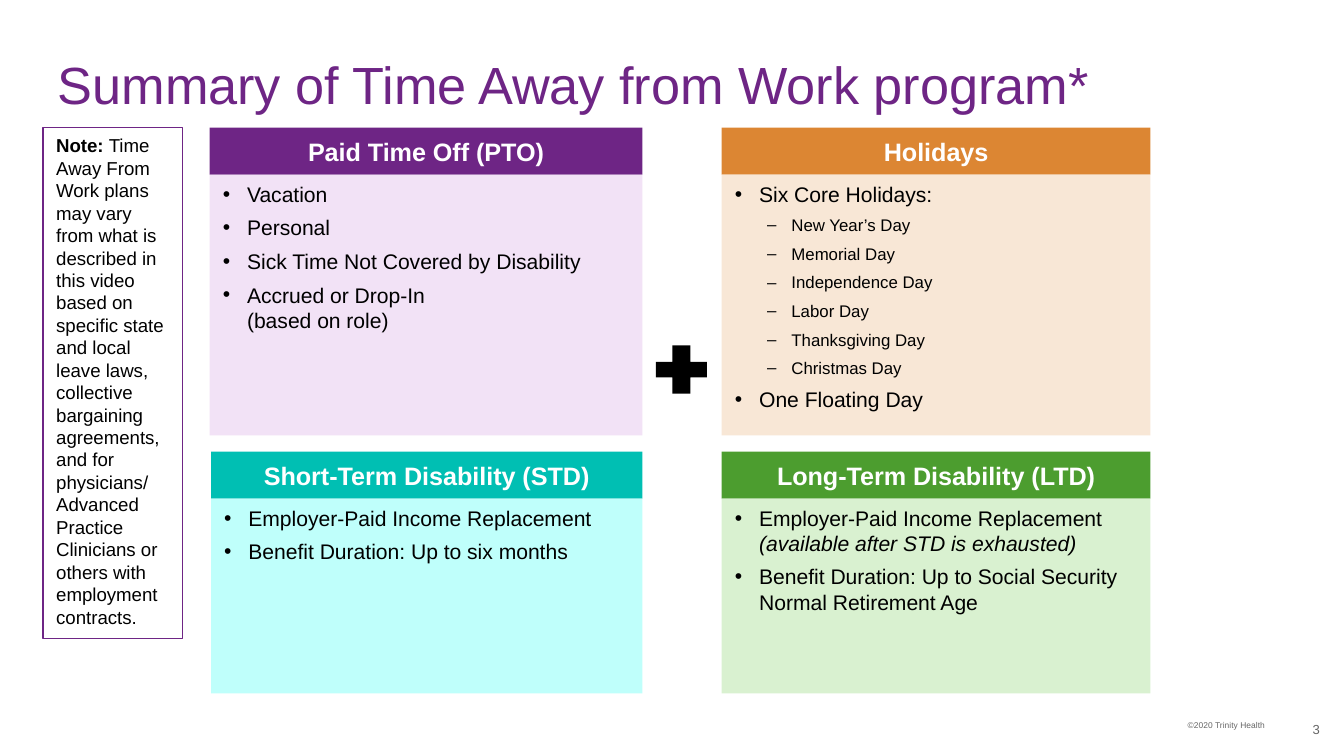
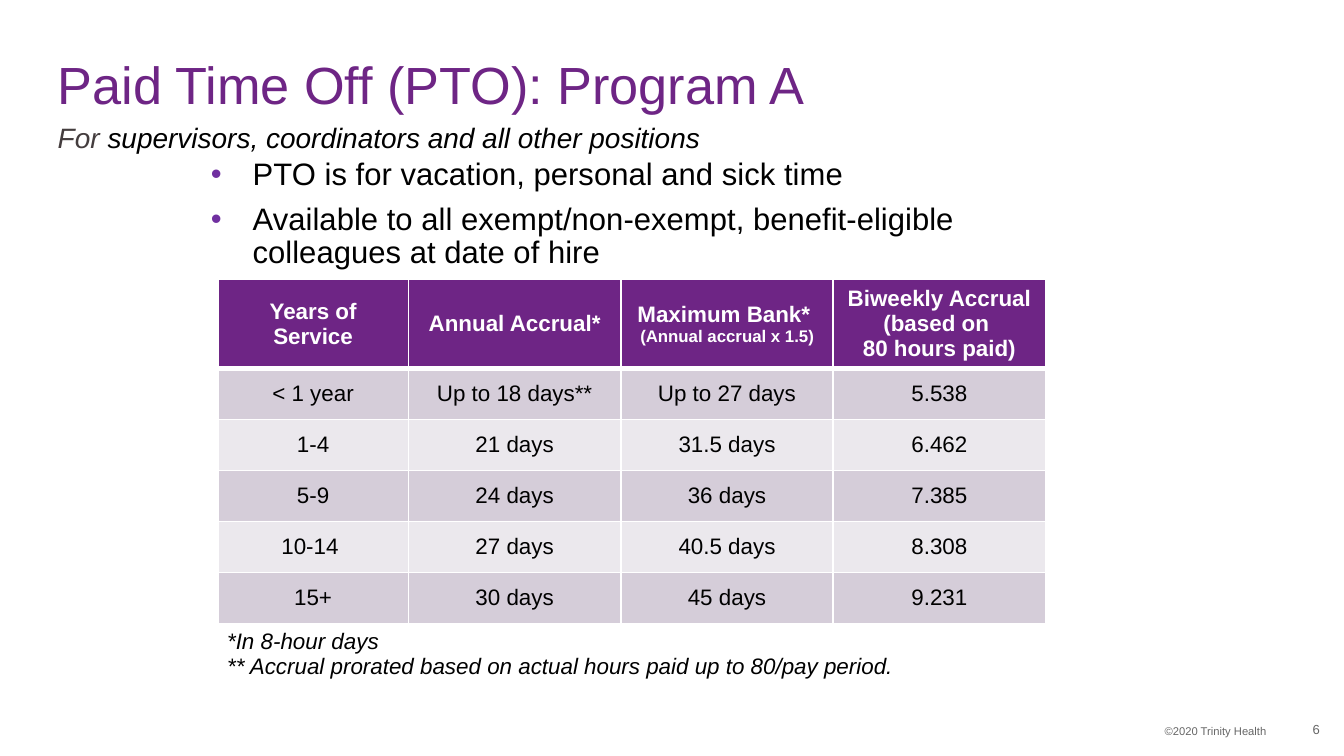
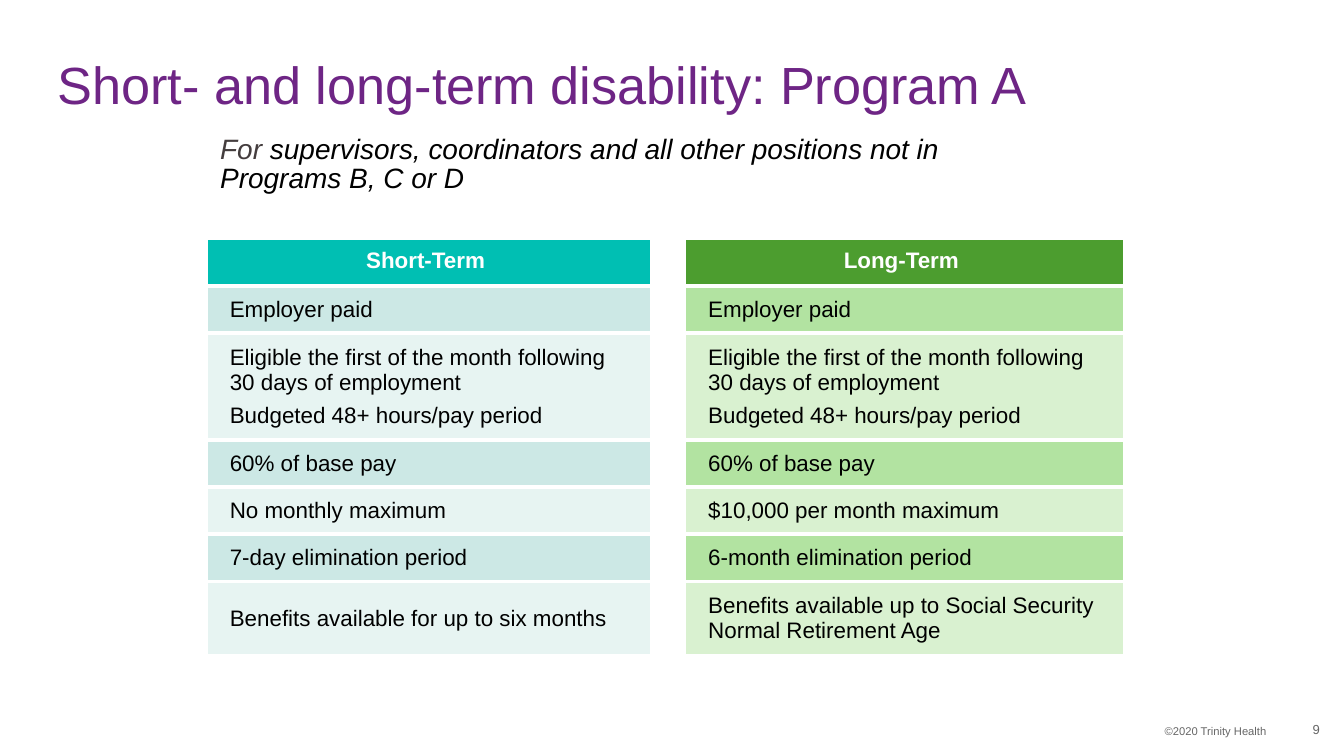
from lxml import etree
from pptx import Presentation
from pptx.dml.color import RGBColor
from pptx.enum import shapes, text
from pptx.oxml import ns
from pptx.util import Inches, Pt

FONT = "Arial"
PURPLE, TEAL, GREEN, ORANGE = "6E2585", "00BFB3", "4C9D2F", "DC8633"
BLACK, WHITE, GRAY, CHARCOAL = "000000", "FFFFFF", "666666", "443D3E"
LEFT, CENTER, RIGHT = text.PP_ALIGN.LEFT, text.PP_ALIGN.CENTER, text.PP_ALIGN.RIGHT
TOP, MIDDLE = text.MSO_ANCHOR.TOP, text.MSO_ANCHOR.MIDDLE


def rgb(value):
    return RGBColor.from_string(value)


def sub(parent, tag, **attrs):
    return etree.SubElement(parent, ns.qn(tag), attrs)


def set_insets(target, insets):
    sides = ("margin_left", "margin_top", "margin_right", "margin_bottom")
    for side, inset in zip(sides, insets):
        setattr(target, side, Inches(inset))


def add_runs(p, runs, size, color=BLACK, bold=False, italic=False):
    for content, changes in runs:
        look = {"size": size, "color": color, "bold": bold, "italic": italic, **changes}
        for i, line in enumerate(content.split("\n")):
            if i:
                p.add_line_break()
            r = p.add_run()
            r.text = line
            r.font.name = FONT
            r.font.size = Pt(look["size"])
            r.font.color.rgb = rgb(look["color"])
            r.font.bold = look["bold"]
            r.font.italic = look["italic"]


def add_para(tf, content, size, align=LEFT, indent=0, hanging=0, bullet=None,
             bullet_color=BLACK, level=0, spacing=None, before=None, after=None, **look):
    p = tf.paragraphs[0]
    if p.runs:
        p = tf.add_paragraph()
    p.alignment = align
    p.level = level
    pPr = p._p.get_or_add_pPr()
    pPr.set("marL", str(Inches(indent)))
    pPr.set("indent", str(-Inches(hanging)))
    if bullet:
        sub(sub(pPr, "a:buClr"), "a:srgbClr", val=bullet_color)
        sub(pPr, "a:buFont", typeface=FONT)
        sub(pPr, "a:buChar", char=bullet)
    if spacing:
        p.line_spacing = spacing
    if before is not None:
        p.space_before = Pt(before)
    if after is not None:
        p.space_after = Pt(after)
    runs = [(content, {})] if isinstance(content, str) else content
    add_runs(p, runs, size, **look)


def add_text(s, x, y, w, h, insets=(0.1, 0.05, 0.1, 0.05), anchor=TOP):
    tf = s.shapes.add_textbox(Inches(x), Inches(y), Inches(w), Inches(h)).text_frame
    tf.word_wrap = True
    tf.vertical_anchor = anchor
    set_insets(tf, insets)
    return tf


def add_block(s, x, y, w, h, fill=None, line=None, kind="RECTANGLE", anchor=TOP):
    sp = s.shapes.add_shape(shapes.MSO_SHAPE[kind], Inches(x), Inches(y), Inches(w), Inches(h))
    sp.shadow.inherit = False
    if fill:
        sp.fill.solid()
        sp.fill.fore_color.rgb = rgb(fill)
    else:
        sp.fill.background()
    if line:
        sp.line.color.rgb = rgb(line)
        sp.line.width = Pt(0.75)
    else:
        sp.line.fill.background()
    sp.text_frame.word_wrap = True
    sp.text_frame.vertical_anchor = anchor
    return sp


def add_base(prs, title, number, copyright_box=(5.33, 5.34, 4.19, 0.2), copyright_size=6):
    s = prs.slides.add_slide(prs.slide_layouts[6])
    tf = add_text(s, 0.43, 0.38, 9, 0.55, (0, 0, 0, 0), MIDDLE)
    add_para(tf, title, 28, color=PURPLE, spacing=0.9)
    tf = add_text(s, 9.38, 5.28, 0.44, 0.3, (0.1, 0.05, 0, 0.05), MIDDLE)
    add_para(tf, str(number), 7, RIGHT, color=GRAY)
    tf = add_text(s, *copyright_box)
    add_para(tf, "©2020 Trinity Health", copyright_size, RIGHT, color=GRAY)
    return s


def add_audience(s, x, y, w, h, audience, inset=0.1):
    tf = add_text(s, x, y, w, h, (inset, 0.05, 0.1, 0.05))
    runs = [("For ", {"color": CHARCOAL}), (audience, {})]
    add_para(tf, runs, 15, spacing=Pt(15.8), after=4.5, italic=True)


def add_panel(s, x, y, w, h, heading, items, dark, light, alpha=None):
    band = 0.35
    header = add_block(s, x, y, w, band, dark, anchor=MIDDLE)
    add_para(header.text_frame, heading, 13.5, CENTER, color=WHITE, bold=True)
    body = add_block(s, x, y + band, w, h - band, light)
    if alpha:
        color = body.fill._xPr.find(".//" + ns.qn("a:srgbClr"))
        sub(color, "a:alpha", val=str(alpha * 1000))
    for level, content in items:
        add_para(body.text_frame, content, (11.25, 9)[level], level=level,
                 indent=(0.18, 0.42)[level], hanging=0.18, bullet="•‒"[level], after=4.5)


def add_grid(s, x, y, cols, rows):
    frame = s.shapes.add_table(len(rows), len(cols), Inches(x), Inches(y),
                               Inches(sum(cols)), Inches(sum(rows)))
    table = frame.table
    table.first_row = table.horz_banding = False
    for col, width in zip(table.columns, cols):
        col.width = Inches(width)
    for row, height in zip(table.rows, rows):
        row.height = Inches(height)
    return table


def style_cell(cell, fill, insets, top, bottom, anchor=MIDDLE):
    set_insets(cell, insets)
    cell.vertical_anchor = anchor
    tcPr = cell._tc.get_or_add_tcPr()
    for side, width in (("L", 1), ("R", 1), ("T", top), ("B", bottom)):
        ln = sub(tcPr, "a:ln" + side, w=str(Pt(width)))
        sub(sub(ln, "a:solidFill"), "a:srgbClr", val=WHITE)
    if fill:
        cell.fill.solid()
        cell.fill.fore_color.rgb = rgb(fill)
    else:
        cell.fill.background()


def add_accrual_table(s, x, y):
    header = [
        ["Years of Service"],
        ["Annual Accrual*"],
        ["Maximum Bank* ", "(Annual accrual x 1.5)"],
        ["Biweekly Accrual (based on \n80 hours paid)"],
    ]
    body = [
        ("< 1 year", "Up to 18 days**", "Up to 27 days", "5.538"),
        ("1-4", "21 days", "31.5 days", "6.462"),
        ("5-9", "24 days", "36 days", "7.385"),
        ("10-14 ", "27 days", "40.5 days", "8.308"),
        ("15+", "30 days", "45 days", "9.231"),
    ]
    notes = ["*In 8-hour days",
             "** Accrual prorated based on actual hours paid up to 80/pay period."]
    insets = (0.07, 0.03, 0.07, 0.03)
    table = add_grid(s, x, y, [1.42] + [1.58] * 3, [0.66] + [0.38] * 5 + [0.46])
    for c, lines in enumerate(header):
        cell = table.cell(0, c)
        style_cell(cell, PURPLE, insets, 1, 3)
        for line, size in zip(lines, (12, 9)):
            add_para(cell.text_frame, line, size, CENTER, color=WHITE, bold=True)
    for r, values in enumerate(body, 1):
        for c, value in enumerate(values):
            cell = table.cell(r, c)
            style_cell(cell, ("EBE8ED", "D5CDD9")[r % 2], insets, 3 if r == 1 else 1, 1)
            add_para(cell.text_frame, value, 12, CENTER)
    cell = table.cell(6, 0)
    cell.merge(table.cell(6, 3))
    style_cell(cell, None, insets, 1, 1)
    for note in notes:
        add_para(cell.text_frame, note, 12, italic=True)


def add_disability_table(s, x, y):
    eligible = ["Eligible the first of the month following \n30 days of employment",
                "Budgeted 48+ hours/pay period"]
    short_term = [["Short-Term "], ["Employer paid"], eligible, ["60% of base pay"],
                  ["No monthly maximum"], ["7-day elimination period"],
                  ["Benefits available for up to six months"]]
    long_term = [["Long-Term "], ["Employer paid"], eligible, ["60% of base pay"],
                 ["$10,000 per month maximum"], ["6-month elimination period"],
                 ["Benefits available up to Social Security Normal Retirement Age"]]
    plans = [
        (0, short_term, TEAL, ("E7F4F2", "CCE8E5")),
        (2, long_term, GREEN, ("D9F1D0", "B2E3A1")),
    ]
    rows = [0.35, 0.35, 0.79, 0.35, 0.35, 0.35, 0.55]
    last = len(rows) - 1
    table = add_grid(s, x, y, [3.3, 0.26, 3.26], rows)
    for r in range(len(rows)):
        edges = (2.25 if r else 1, 2.25 if r < last else 1)
        style_cell(table.cell(r, 1), None, (0, 0, 0, 0), *edges)
        for c, entries, dark, bands in plans:
            cell = table.cell(r, c)
            style_cell(cell, bands[r % 2] if r else dark, (0.07,) * 4, *edges,
                       anchor=MIDDLE if r else TOP)
            look = {"indent": 0.1} if r else {"align": CENTER, "color": WHITE, "bold": True}
            for i, line in enumerate(entries[r]):
                add_para(cell.text_frame, line, 12, before=2 if i else None, after=2, **look)


def summary_slide(prs):
    s = add_base(prs, "Summary of Time Away from Work program*", 3, (6.36, 5.31, 3.15, 0.2), 4.5)
    pto = ["Vacation", "Personal", "Sick Time Not Covered by Disability",
           "Accrued or Drop-In \n(based on role)"]
    days = ["New Year’s Day", "Memorial Day", "Independence Day", "Labor Day",
            "Thanksgiving Day", "Christmas Day"]
    std = ["Employer-Paid Income Replacement", "Benefit Duration: Up to six months"]
    ltd = [[("Employer-Paid Income Replacement ", {}),
            ("(available after STD is exhausted)", {"italic": True})],
           "Benefit Duration: Up to Social Security Normal Retirement Age"]
    holidays = [(0, "Six Core Holidays:"), *((1, day) for day in days), (0, "One Floating Day")]
    add_panel(s, 1.56, 0.95, 3.22, 2.29, "Paid Time Off (PTO)",
              [(0, item) for item in pto], PURPLE, "E7CAF0", alpha=54)
    add_panel(s, 5.37, 0.95, 3.19, 2.29, "Holidays", holidays, ORANGE, "F8E7D6")
    add_panel(s, 5.37, 3.36, 3.19, 1.8, "Long-Term Disability (LTD)",
              [(0, item) for item in ltd], GREEN, "D9F1D0")
    add_panel(s, 1.57, 3.36, 3.21, 1.8, "Short-Term Disability (STD)",
              [(0, item) for item in std], TEAL, "BFFFFB")
    plus = add_block(s, 4.88, 2.57, 0.38, 0.36, BLACK, kind="CROSS")
    plus.adjustments[0] = 0.34
    note = add_block(s, 0.32, 0.95, 1.04, 3.8, line=PURPLE)
    add_para(note.text_frame, [
        ("Note: ", {"bold": True}),
        ("Time Away From Work plans may vary from what is described in this video based on "
         "specific state and local leave laws, collective bargaining agreements, and for "
         "physicians/ Advanced Practice Clinicians or others with employment contracts.", {}),
    ], 10)


def pto_slide(prs):
    s = add_base(prs, "Paid Time Off (PTO): Program A", 6)
    tf = add_text(s, 1.57, 1.08, 6.76, 1.11, (0, 0.1, 0.1, 0.05))
    for item in ("PTO is for vacation, personal and sick time",
                 "Available to all exempt/non-exempt, benefit-eligible \ncolleagues at date of hire"):
        add_para(tf, item, 16.65, indent=0.31, hanging=0.31, bullet="•",
                 bullet_color="7030A0", spacing=0.9, after=6)
    add_accrual_table(s, 1.62, 2.08)
    add_audience(s, 0.28, 0.88, 6.24, 0.33,
                 "supervisors, coordinators and all other positions", inset=0.15)


def disability_slide(prs):
    s = add_base(prs, "Short- and long-term disability: Program A", 9)
    add_disability_table(s, 1.54, 1.78)
    add_audience(s, 1.54, 0.96, 6.24, 0.55,
                 "supervisors, coordinators and all other positions not in Programs B, C or D")


def main():
    prs = Presentation()
    prs.slide_width = Inches(10)
    prs.slide_height = prs.slide_width * 9 // 16
    summary_slide(prs)
    pto_slide(prs)
    disability_slide(prs)
    prs.save("out.pptx")


if __name__ == "__main__":
    main()
